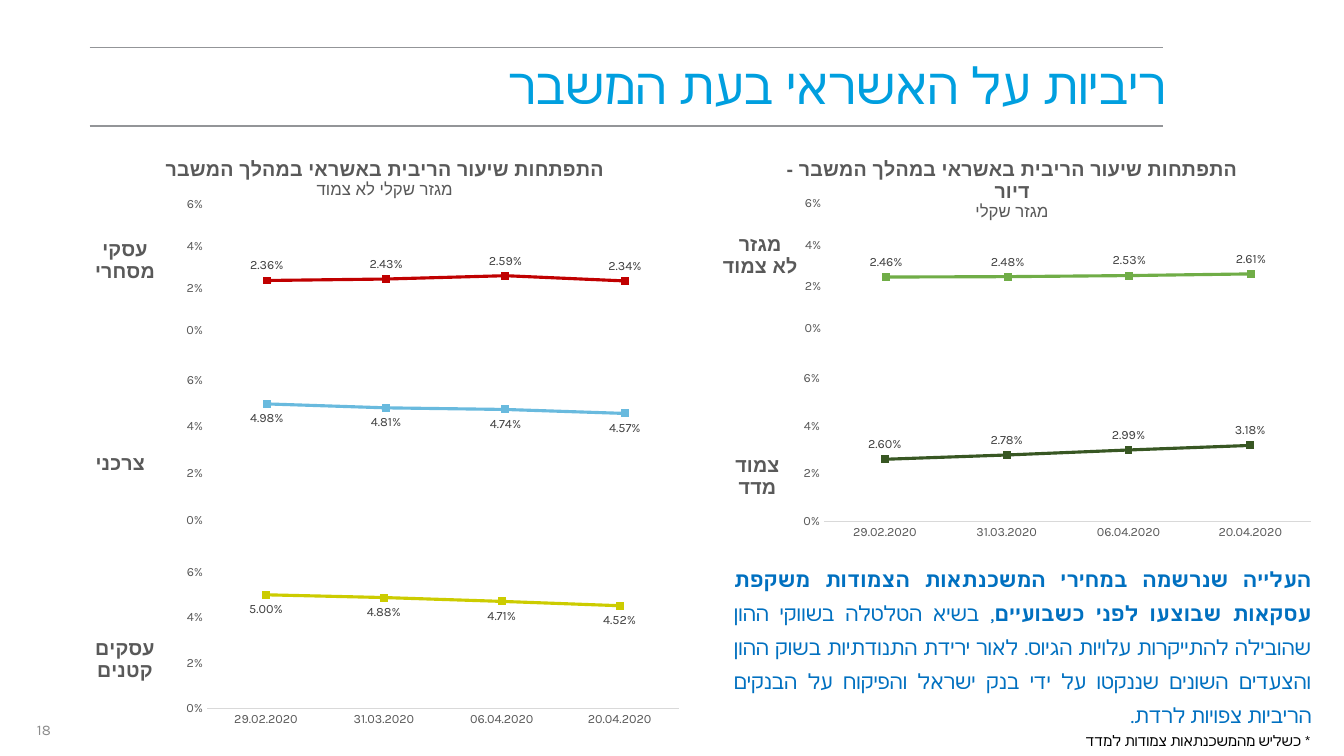
from lxml import etree
from pptx import Presentation
from pptx.chart.data import CategoryChartData
from pptx.dml.color import RGBColor
from pptx.enum.chart import XL_CHART_TYPE, XL_LABEL_POSITION as POS, XL_TICK_MARK
from pptx.enum.shapes import MSO_CONNECTOR
from pptx.enum.text import MSO_ANCHOR, PP_ALIGN
from pptx.oxml.ns import qn
from pptx.util import Inches, Pt

TITLE_BLUE = RGBColor(0x00, 0x9F, 0xDF)
BODY_BLUE = RGBColor(0x00, 0x70, 0xC0)
RULE_GRAY = RGBColor(0x93, 0x95, 0x98)
NUMBER_GRAY = RGBColor(0x8C, 0x8C, 0x8C)
AXIS_GRAY = RGBColor(0x59, 0x59, 0x59)
LABEL_GRAY = RGBColor(0x40, 0x40, 0x40)
AXIS_LINE = RGBColor(0xD9, 0xD9, 0xD9)
BLACK = RGBColor(0, 0, 0)
RED = RGBColor(0xC0, 0x00, 0x00)
SKY = RGBColor(0x69, 0xBA, 0xDE)
LIME = RGBColor(0xCC, 0xCC, 0x00)
GREEN = RGBColor(0x70, 0xAD, 0x47)
DARK_GREEN = RGBColor(0x38, 0x57, 0x23)

DATES = ["29.02.2020", "31.03.2020", "06.04.2020", "20.04.2020"]
CHART_W = 5.92


def set_font(font, size, color, name="Karla", bold=False):
    font.size, font.name, font.bold = Pt(size), name, bold
    font.color.rgb = color


def add_run(p, text, size, color, name="Karla", bold=False):
    r = p.add_run()
    r.text = text
    set_font(r.font, size, color, name, bold)
    etree.SubElement(r.font._element, qn("a:cs")).set("typeface", name)


def add_text(s, box, runs, size, color, name="Karla", align=PP_ALIGN.RIGHT,
             anchor=MSO_ANCHOR.TOP, spacing=None):
    """Right-to-left paragraph; runs are (text, bold) pairs."""
    tf = s.shapes.add_textbox(*map(Inches, box)).text_frame
    tf.word_wrap = True
    tf.vertical_anchor = anchor
    p = tf.paragraphs[0]
    p.alignment = align
    p.line_spacing = spacing
    p._p.get_or_add_pPr().set("rtl", "1")
    for text, bold in runs:
        add_run(p, text, size, color, name, bold)


def set_layout(parent, index, **values):
    """Place a chart part by fractions of the chart area."""
    layout = parent.find(qn("c:layout"))
    if layout is None:
        layout = etree.Element(qn("c:layout"))
        parent.insert(index, layout)
    manual = etree.SubElement(layout, qn("c:manualLayout"))
    for tag, value in values.items():
        etree.SubElement(manual, qn("c:" + tag)).set("val", str(value))


def fill_title(title, lines, x, y):
    """Lines are (text, size, bold) triples; x and y are chart fractions."""
    tf = title.text_frame
    for i, (text, size, bold) in enumerate(lines):
        p = tf.paragraphs[0] if i == 0 else tf.add_paragraph()
        p.alignment = PP_ALIGN.CENTER
        p._p.get_or_add_pPr().set("rtl", "1")
        add_run(p, text, size, AXIS_GRAY, "Arial", bold)
    body = tf._txBody.bodyPr
    body.set("rot", "0")
    body.set("vert", "horz")
    set_layout(title._element, 1, xMode="edge", yMode="edge", x=x, y=y)


def add_rate_chart(s, left, top, height, rates, color, plot, name, name_at,
                   heading=None, heading_at=None, dates=False, label_pos=POS.ABOVE):
    data = CategoryChartData(number_format="0.00%")
    data.categories = DATES if dates else ["1", "2", "3", "4"]
    data.add_series("Series 1", [rate / 100 for rate in rates])
    chart = s.shapes.add_chart(XL_CHART_TYPE.LINE, Inches(left), Inches(top),
                               Inches(CHART_W), Inches(height), data).chart
    set_font(chart.font, 10, BLACK)
    chart.has_legend = False
    chart.has_title = heading is not None

    def fraction(at):
        return round((at[0] - left) / CHART_W, 3), round((at[1] - top) / height, 3)

    if heading:
        fill_title(chart.chart_title, heading, *fraction(heading_at))

    # Axes
    cat, val = chart.category_axis, chart.value_axis
    cat.visible = dates
    cat.format.line.color.rgb = AXIS_LINE
    cat.format.line.width = Pt(0.75)
    val.minimum_scale, val.maximum_scale, val.major_unit = 0, 0.06, 0.02
    val.has_major_gridlines = False
    val.format.line.fill.background()
    val.tick_labels.number_format = "0%"
    val.tick_labels.number_format_is_linked = False
    for axis in (cat, val):
        axis.major_tick_mark = axis.minor_tick_mark = XL_TICK_MARK.NONE
        set_font(axis.tick_labels.font, 9, AXIS_GRAY)
    fill_title(val.axis_title, [(line, 14, True) for line in name], *fraction(name_at))

    # Line and its labels
    chart.plots[0].vary_by_categories = False
    series = chart.plots[0].series[0]
    series.smooth = False
    series.marker.style = None
    series.format.line.color.rgb = color
    series.format.line.width = Pt(2.25)
    series.format.line._ln.set("cap", "rnd")
    labels = series.data_labels
    labels.show_value = True
    labels.position = label_pos
    labels.number_format = "0.00%"
    labels.number_format_is_linked = False
    set_font(labels.font, 9, LABEL_GRAY)

    x, y, w, h = plot
    set_layout(chart._chartSpace.chart.plotArea, 0, layoutTarget="inner",
               xMode="edge", yMode="edge", x=x, y=y, w=w, h=h)


def add_header(s, left, top, width, height):
    for y in (top, top + height):
        line = s.shapes.add_connector(MSO_CONNECTOR.STRAIGHT, Inches(left), Inches(y),
                                      Inches(left + width), Inches(y))
        line.line.color.rgb = RULE_GRAY
        line.line.width = Pt(0.75)
        etree.SubElement(line._element.spPr, qn("a:effectLst"))
    add_text(s, (left + 0.66, top + 0.02, width - 0.52, 0.8),
             [("ריביות על האשראי בעת המשבר", False)], 36, TITLE_BLUE, "Roboto",
             anchor=MSO_ANCHOR.MIDDLE, spacing=0.8)


def add_unlinked_column(s, left, top):
    add_rate_chart(s, left, top, 2.05, [2.36, 2.43, 2.59, 2.34], RED,
                   (0.2, 0.305, 0.8, 0.61), ["עסקי", "מסחרי"], (left + 0.04, top + 0.92),
                   [("התפתחות שיעור הריבית באשראי במהלך המשבר", 14, True),
                    ("מגזר שקלי לא צמוד", 12, False)], (left + 0.74, top + 0.12))
    add_rate_chart(s, left, top + 2.22, 1.69, [4.98, 4.81, 4.74, 4.57], SKY,
                   (0.2, 0.09, 0.8, 0.82), ["צרכני"], (left + 0.04, top + 3.03),
                   label_pos=POS.BELOW)
    add_rate_chart(s, left, top + 4.11, 1.85, [5.00, 4.88, 4.71, 4.52], LIME,
                   (0.2, 0.09, 0.79, 0.73), ["עסקים", "קטנים"], (left + 0.04, top + 4.88),
                   dates=True, label_pos=POS.BELOW)


def add_housing_column(s, left, top):
    add_rate_chart(s, left, top, 2.03, [2.46, 2.48, 2.53, 2.61], GREEN,
                   (0.185, 0.305, 0.815, 0.61), ["מגזר", "לא צמוד"], (left + 0.05, top + 0.87),
                   [("התפתחות שיעור הריבית באשראי במהלך המשבר - דיור", 14, True),
                    ("מגזר שקלי", 12, False)], (left + 0.68, top + 0.12))
    add_rate_chart(s, left, top + 2.19, 2.03, [2.60, 2.78, 2.99, 3.18], DARK_GREEN,
                   (0.183, 0.08, 0.817, 0.7), ["צמוד", "מדד"], (left + 0.17, top + 3.06),
                   dates=True)
    add_text(s, (left + 0.09, top + 4.08, 5.93, 1.8),
             [("העלייה שנרשמה במחירי המשכנתאות הצמודות משקפת עסקאות שבוצעו לפני כשבועיים", True),
              (", בשיא הטלטלה בשווקי ההון שהובילה להתייקרות עלויות הגיוס. לאור ירידת "
               "התנודתיות בשוק ההון והצעדים השונים שננקטו על ידי בנק ישראל והפיקוח על "
               "הבנקים הריביות צפויות לרדת.", False)],
             15, BODY_BLUE, align=PP_ALIGN.JUSTIFY, spacing=1.35)
    add_text(s, (left + 0.39, top + 5.81, 5.62, 0.29),
             [("* כשליש מהמשכנתאות צמודות למדד", False)], 10.5, BLACK)


def main():
    prs = Presentation()
    prs.slide_width, prs.slide_height = Inches(13.33), Inches(7.5)
    s = prs.slides.add_slide(prs.slide_layouts[6])
    add_header(s, 0.89, 0.47, 10.64, 0.78)
    add_housing_column(s, 7.09, 1.4)
    add_unlinked_column(s, 0.87, 1.4)
    add_text(s, (0.17, 7.04, 0.53, 0.4), [("18", False)], 10.5, NUMBER_GRAY,
             align=PP_ALIGN.CENTER, anchor=MSO_ANCHOR.MIDDLE)
    prs.save("out.pptx")


if __name__ == "__main__":
    main()
